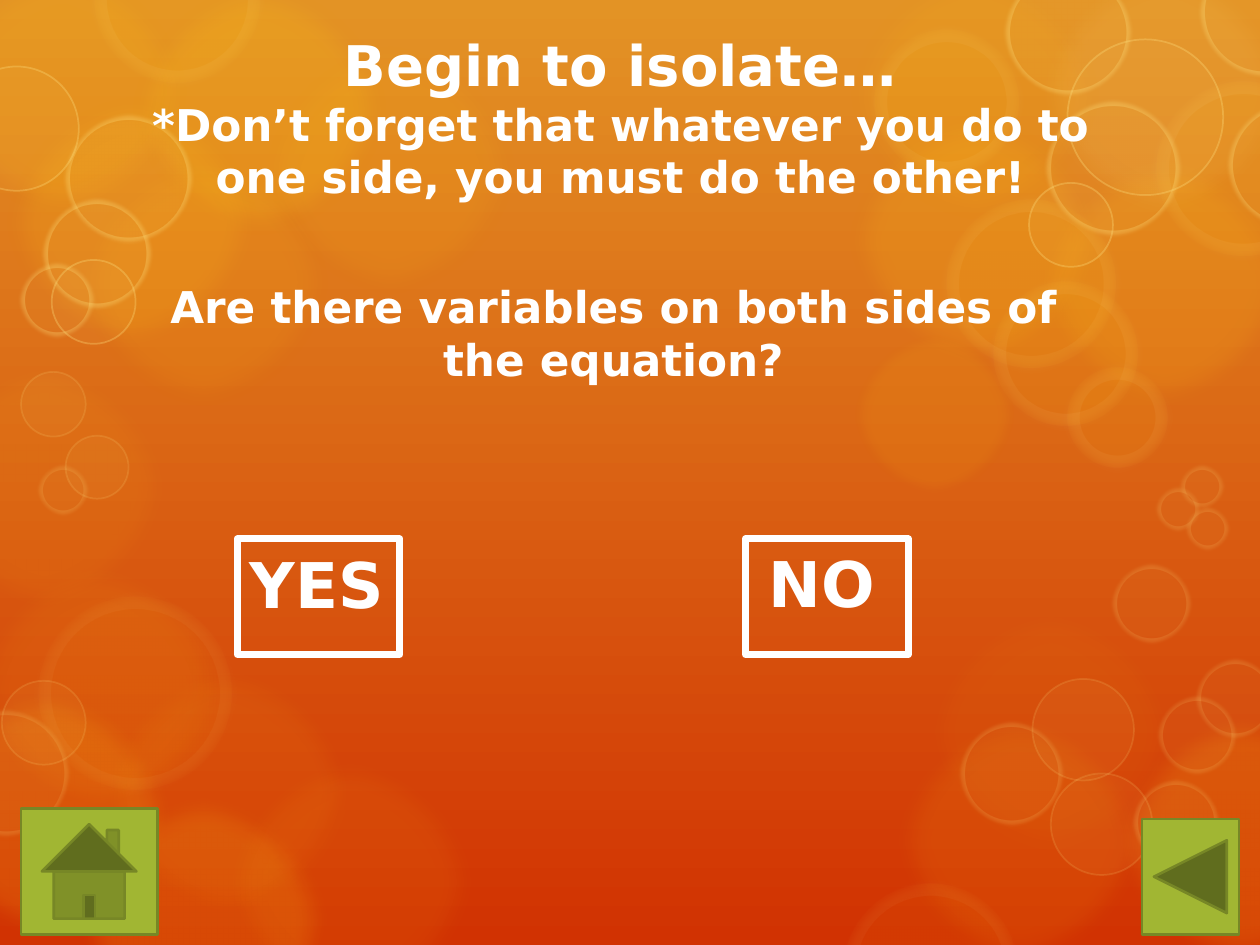
from lxml import etree
from pptx import Presentation, util as u
from pptx.dml.color import RGBColor
from pptx.enum import shapes, text
from pptx.oxml import ns

Pt = u.Pt
WHITE, AMBER, YELLOW, CREAM = "FFFFFF", "FDC61B", "FFE281", "FEEBAE"
kinds = shapes.MSO_SHAPE


def paint(target, color, opacity=100):
    """Give a fill (or a line's fill) a solid colour with an opacity in percent."""
    target.solid()
    target.fore_color.rgb = RGBColor.from_string(color)
    if opacity < 100:
        tint = target._xPr.find(".//" + ns.qn("a:srgbClr"))
        etree.SubElement(tint, ns.qn("a:alpha"), val=str(opacity * 1000))


def add_bubble(left, top, size, color, opacity, ring=None, soft=0):
    """Put a circle on the layout as decoration; ring is (colour, width, opacity)."""
    bubble = slide.shapes.add_shape(kinds.OVAL, Pt(left), Pt(top), Pt(size), Pt(size))
    bubble.shadow.inherit = False
    paint(bubble.fill, color, opacity)
    if ring:
        ring_color, width, ring_opacity = ring
        bubble.line.width = Pt(width)
        paint(bubble.line.fill, ring_color, ring_opacity)
    else:
        bubble.line.fill.background()
    if soft:
        effects = bubble._element.spPr.find(ns.qn("a:effectLst"))
        etree.SubElement(effects, ns.qn("a:softEdge"), rad=str(Pt(soft)))
    blank.shapes._spTree.append(bubble._element)


deck = Presentation()
deck.slide_width, deck.slide_height = Pt(720), Pt(540)
blank = deck.slide_layouts[6]
slide = deck.slides.add_slide(blank)

# Background, orange to red downwards
backdrop = slide.background.fill
backdrop.gradient()
backdrop.gradient_angle = 270
for stop, color in zip(backdrop.gradient_stops, ("E39325", "D13202")):
    stop.color.rgb = RGBColor.from_string(color)

# Large blurred glows: left, top, opacity
glows = [
    (-19, 318, 8), (41, 86, 10), (148, 22, 10), (41, 451, 16), (-40, -23, 14),
    (73, -13, 20), (0, 52, 15), (482, -21, 10), (590, 86, 15), (634, 405, 16),
    (525, 343, 5), (-49, 390, 16), (55, 377, 8), (482, 62, 15), (508, 405, 10),
    (125, 429, 8), (-50, 203, 8),
]
for left, top, opacity in glows:
    add_bubble(left, top, 150.5, AMBER, opacity, soft=12)
add_bubble(590, -23, 150.5, YELLOW, 10, soft=12)
add_bubble(486, 189, 96, AMBER, 10, soft=6)

# Hazy discs with a wide rim: left, top, size
hazes = [
    (661, 47, 99), (500, 17, 82), (541, 114, 96), (568, 161, 82), (610, 210, 57),
    (54, -47, 94), (22, 341, 110), (482, 505, 99),
]
for left, top, size in hazes:
    opacity, rim_opacity = (10, 6) if top < 270 else (6, 4)
    add_bubble(left, top, size, AMBER, opacity, (CREAM, 14, rim_opacity), soft=6)

# Rings, sharp and blurred, fainter in the lower part: left, top, size
sharp_rings = [
    (1, 389, 48), (-26, 38, 71), (29.5, 148.5, 48), (610, 22.5, 89), (588, 104.5, 48),
    (600.5, 442, 58), (590, 388, 58), (12, 212.5, 37), (37.5, 249, 36),
]
blurred_rings = [
    (-32, 406, 71), (37.5, 66, 72), (25, 114.5, 61), (12, 151, 41),
    (575, -17, 71), (686, -29, 72), (702, 59, 71), (598, 58, 76), (549, 413, 58),
    (648, 446, 48), (636, 323, 44), (662, 398, 44), (684, 377, 44),
    (675, 266, 24), (661, 279, 24), (678, 290, 24), (22, 266, 28),
]
for rings, width, soft in ((sharp_rings, 1, 0), (blurred_rings, 5, 2.5)):
    for left, top, size in rings:
        add_bubble(left, top, size, YELLOW, 5, (YELLOW, width, 30 if top < 200 else 15), soft)

# Title, question and answers: box, centred, lines as (wording, size)
wording = [
    ((74, 30, 561, 73), True, [
        ("Begin to isolate…", 32),
        ("*Don’t forget that whatever you do to one side, you must do the other!", 25)]),
    ((84, 132, 533, 116), True, [("Are there variables on both sides of the equation?", 25)]),
    ((135.5, 308, 102, 51), False, [("YES", 36)]),
    ((432, 307.5, 102, 51), False, [("NO", 36)]),
]
for box, centred, lines in wording:
    frame = slide.shapes.add_textbox(*map(Pt, box)).text_frame
    frame.word_wrap = True
    if centred:
        frame.vertical_anchor = text.MSO_ANCHOR.MIDDLE
    paragraph = frame.paragraphs[0]
    paragraph.alignment = text.PP_ALIGN.CENTER if centred else text.PP_ALIGN.LEFT
    paragraph.font.name = "DejaVu Sans"
    paragraph.font.bold = True
    paragraph.font.color.rgb = RGBColor.from_string(WHITE)
    for number, (words, size) in enumerate(lines):
        if number:
            paragraph.add_line_break()
        run = paragraph.add_run()
        run.text = words
        run.font.size = Pt(size)

# Answer frames and navigation buttons
buttons = [
    (kinds.ACTION_BUTTON_CUSTOM, (135.5, 308, 93, 66), None, WHITE, 4),
    (kinds.ACTION_BUTTON_CUSTOM, (426, 308, 93, 66), None, WHITE, 4),
    (kinds.ACTION_BUTTON_HOME, (12, 462, 78, 72), "A1B633", "778726", 1.5),
    (kinds.ACTION_BUTTON_BACK_OR_PREVIOUS, (652.5, 468, 55.5, 66), "A1B633", "778726", 1.5),
]
for kind, box, fill, edge, width in buttons:
    button = slide.shapes.add_shape(kind, *map(Pt, box))
    button.shadow.inherit = False
    if fill:
        paint(button.fill, fill)
    else:
        button.fill.background()
    paint(button.line.fill, edge)
    button.line.width = Pt(width)

deck.save("out.pptx")
